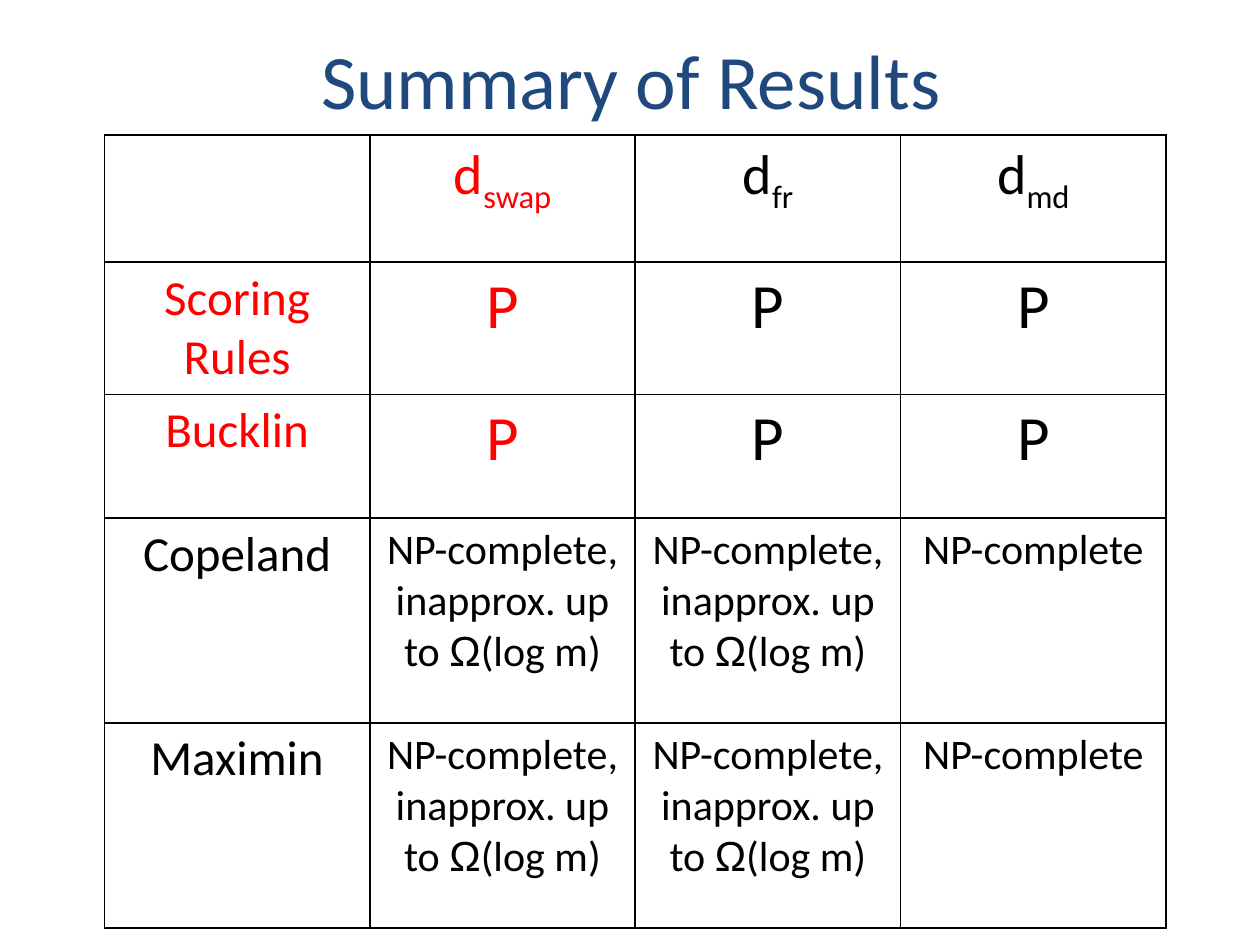
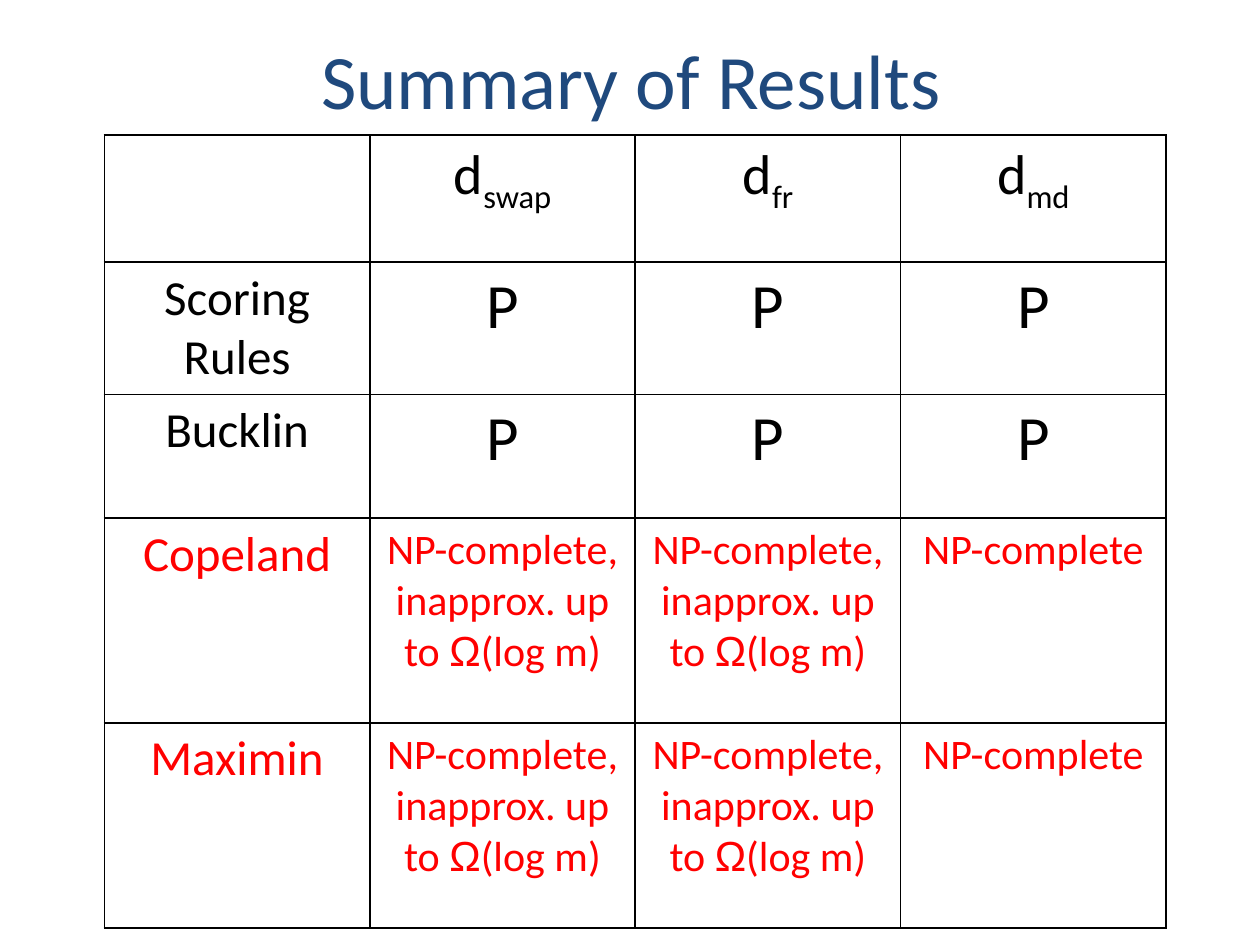
from dataclasses import dataclass

from lxml import etree
from pptx import Presentation
from pptx import util as u
from pptx.dml import color
from pptx.enum import text
from pptx.oxml import ns

TITLE = "Summary of Results"
DISTANCES = ["swap", "fr", "md"]
HARD = "NP-complete"
INAPPROX = "NP-complete, inapprox. up to Ω(log m)"
RESULTS = [
    ("Scoring Rules", ["P", "P", "P"]),
    ("Bucklin", ["P", "P", "P"]),
    ("Copeland", [INAPPROX, INAPPROX, HARD]),
    ("Maximin", [INAPPROX, INAPPROX, HARD]),
]
# Highlighted (row, column) cells of each slide
HIGHLIGHTS = [
    {(row, column) for row in range(3) for column in range(2)},
    {(row, column) for row in (3, 4) for column in range(4)},
]


@dataclass(frozen=True)
class Theme:
    font: str = "Calibri"
    symbol_font: str = "Arial"
    title_color: str = "1F497D"
    ink: str = "000000"
    highlight: str = "FF0000"
    title_size: float = 44
    header_size: float = 32
    rule_size: float = 28
    easy_size: float = 36
    hard_size: float = 24
    border: float = 1


THEME = Theme()
SLIDE_SIZE = (720, 540)
TITLE_BOX = (36.7, 0, 648, 90)
TABLE_LEFT, TABLE_TOP = 59.6, 77.2
COLUMN_WIDTH = 151.7
ROW_HEIGHTS = [72.6, 75.7, 70.6, 117.1, 117.1]


def style(span, size, rgb, font=THEME.font):
    span.font.name = font
    span.font.size = u.Pt(size)
    span.font.color.rgb = color.RGBColor.from_string(rgb)


def add_span(para, words, *look):
    span = para.add_run()
    span.text = words
    style(span, *look)
    return span


def write_distance(para, name, rgb):
    add_span(para, "d", THEME.header_size, rgb)
    subscript = add_span(para, name, THEME.header_size, rgb)
    subscript._r.get_or_add_rPr().set("baseline", "-25000")


def write_result(para, result, rgb):
    size = THEME.easy_size if result == "P" else THEME.hard_size
    before, omega, after = result.partition("Ω")
    add_span(para, before, size, rgb)
    if omega:
        add_span(para, omega, size, rgb, THEME.symbol_font)
        add_span(para, after, size, rgb)


def outline(cell):
    properties = cell._tc.get_or_add_tcPr()
    for side in ("a:lnL", "a:lnR", "a:lnT", "a:lnB"):
        line = etree.SubElement(properties, ns.qn(side), w=str(u.Pt(THEME.border)))
        fill = etree.SubElement(line, ns.qn("a:solidFill"))
        etree.SubElement(fill, ns.qn("a:srgbClr"), val=THEME.ink)
    cell.fill.background()


def add_title(slide):
    box = slide.shapes.add_textbox(*map(u.Pt, TITLE_BOX))
    frame = box.text_frame
    frame.word_wrap = True
    frame.vertical_anchor = text.MSO_ANCHOR.MIDDLE
    frame.text = TITLE
    para = frame.paragraphs[0]
    para.alignment = text.PP_ALIGN.CENTER
    style(para.runs[0], THEME.title_size, THEME.title_color)


def add_results(slide, highlighted):
    rows, columns = len(RESULTS) + 1, len(DISTANCES) + 1
    table = slide.shapes.add_table(
        rows, columns, u.Pt(TABLE_LEFT), u.Pt(TABLE_TOP),
        u.Pt(COLUMN_WIDTH * columns), u.Pt(sum(ROW_HEIGHTS))).table
    table.first_row = table.horz_banding = False
    for column in table.columns:
        column.width = u.Pt(COLUMN_WIDTH)
    for row, height in zip(table.rows, ROW_HEIGHTS):
        row.height = u.Pt(height)

    for row in range(rows):
        for column in range(columns):
            cell = table.cell(row, column)
            outline(cell)
            para = cell.text_frame.paragraphs[0]
            para.alignment = text.PP_ALIGN.CENTER
            rgb = THEME.highlight if (row, column) in highlighted else THEME.ink
            if row and column:
                write_result(para, RESULTS[row - 1][1][column - 1], rgb)
            elif row:
                add_span(para, RESULTS[row - 1][0], THEME.rule_size, rgb)
            elif column:
                write_distance(para, DISTANCES[column - 1], rgb)


def main():
    deck = Presentation()
    deck.slide_width, deck.slide_height = map(u.Pt, SLIDE_SIZE)
    for highlighted in HIGHLIGHTS:
        slide = deck.slides.add_slide(deck.slide_layouts[6])
        add_title(slide)
        add_results(slide, highlighted)
    deck.save("out.pptx")


if __name__ == "__main__":
    main()
